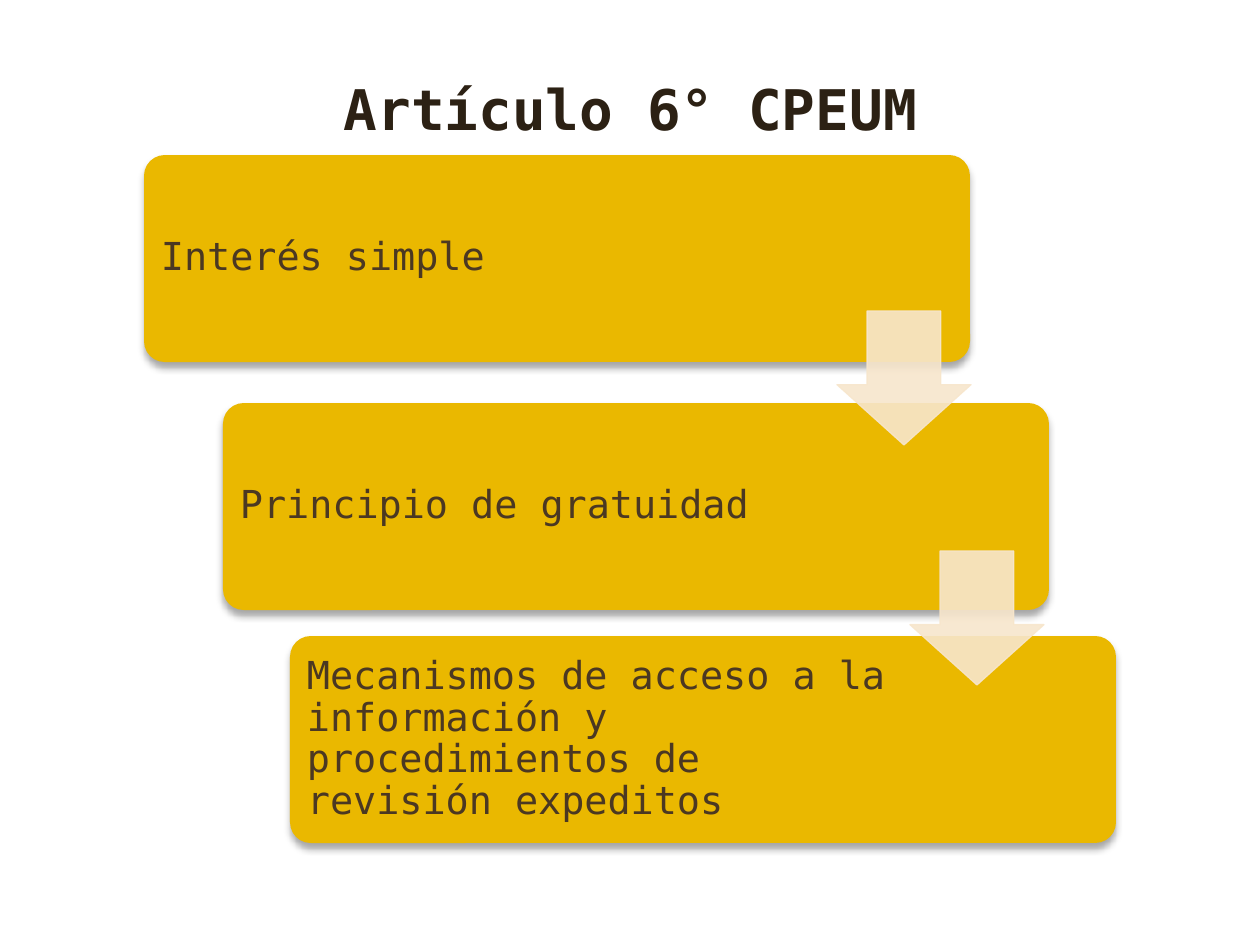
"""Build the slide on Article 6 as three descending steps joined by arrows."""
from dataclasses import dataclass

from lxml import etree
from pptx import Presentation
from pptx.dml.color import RGBColor
from pptx.enum.shapes import MSO_SHAPE
from pptx.enum.text import MSO_ANCHOR, PP_ALIGN
from pptx.oxml.ns import qn
from pptx.util import Emu, Pt

ROUNDED = MSO_SHAPE.ROUNDED_RECTANGLE
DOWN_ARROW = MSO_SHAPE.DOWN_ARROW
TOP, MIDDLE = MSO_ANCHOR.TOP, MSO_ANCHOR.MIDDLE
LEFT, CENTER = PP_ALIGN.LEFT, PP_ALIGN.CENTER

PX_PER_INCH = 126
FONT = "DejaVu Sans Mono"
COLORS = {
    "title": "2C2114",
    "text": "4B3822",
    "step": "EAB800",
    "arrow": "F7E6CC",
    "shadow": "000000",
}
STEP_WIDTH, STEP_HEIGHT = 826, 207
LABEL_WIDTH, LABEL_INSET = 607, 6
ARROW_SIZE = 134


@dataclass(frozen=True)
class Step:
    left: int
    top: int
    text: str


@dataclass(frozen=True)
class Arrow:
    left: int
    top: int


STEPS = (
    Step(144, 155, "Interés simple"),
    Step(223, 403, "Principio de gratuidad"),
    Step(290, 636, "Mecanismos de acceso a la información y "
                   "procedimientos de revisión expeditos"),
)
ARROWS = (Arrow(837, 311), Arrow(910, 551))


def px(length: int) -> Emu:
    return Emu(round(length * 914400 / PX_PER_INCH))


def color(name: str) -> RGBColor:
    return RGBColor.from_string(COLORS[name])


def write_text(shape, text: str, *, size: int, color_name: str, bold: bool = False,
               align=LEFT, anchor=MIDDLE, margins: tuple = (11, 11),
               line_spacing: float = 1.0) -> None:
    frame = shape.text_frame
    frame.word_wrap = True
    frame.vertical_anchor = anchor
    side, vertical = margins
    frame.margin_left = frame.margin_right = px(side)
    frame.margin_top = frame.margin_bottom = px(vertical)
    paragraph = frame.paragraphs[0]
    paragraph.alignment = align
    paragraph.line_spacing = line_spacing
    run = paragraph.add_run()
    run.text = text
    run.font.name = FONT
    run.font.size = Pt(size)
    run.font.bold = bold
    run.font.color.rgb = color(color_name)


def add_filled_shape(slide, kind, box: tuple, color_name: str, adjustments: tuple):
    shape = slide.shapes.add_shape(kind, *map(px, box))
    for index, value in enumerate(adjustments):
        shape.adjustments[index] = value
    shape.fill.solid()
    shape.fill.fore_color.rgb = color(color_name)
    shape.line.fill.background()
    shape.shadow.inherit = False
    return shape


def set_alpha(color_element, percent: int) -> None:
    etree.SubElement(color_element, qn("a:alpha"), val=str(percent * 1000))


def add_shadow(shape) -> None:
    effects = shape.element.spPr.find(qn("a:effectLst"))
    shadow = etree.SubElement(
        effects, qn("a:outerShdw"), blurRad=str(Pt(4)), dist=str(Pt(3)),
        dir="5400000", rotWithShape="0")
    set_alpha(etree.SubElement(shadow, qn("a:srgbClr"), val=COLORS["shadow"]), 35)


def draw_step(slide, step: Step) -> None:
    card = add_filled_shape(
        slide, ROUNDED, (step.left, step.top, STEP_WIDTH, STEP_HEIGHT), "step", (0.1,))
    add_shadow(card)
    label = slide.shapes.add_textbox(
        px(step.left + LABEL_INSET), px(step.top + LABEL_INSET),
        px(LABEL_WIDTH), px(STEP_HEIGHT - 2 * LABEL_INSET))
    write_text(label, step.text, size=22, color_name="text", line_spacing=0.9)


def draw_arrow(slide, arrow: Arrow) -> None:
    shape = add_filled_shape(
        slide, DOWN_ARROW, (arrow.left, arrow.top, ARROW_SIZE, ARROW_SIZE),
        "arrow", (0.45, 0.55))
    shape.adjustments[0], shape.adjustments[1] = 0.55, 0.45
    shape.line.color.rgb = color("arrow")
    shape.line.width = Pt(0.75)
    for color_element in shape.element.spPr.iter(qn("a:srgbClr")):
        set_alpha(color_element, 90)


def draw_title(slide, text: str) -> None:
    title = slide.shapes.title
    title.left, title.top, title.width, title.height = map(px, (95, 66, 1071, 110))
    write_text(title, text, size=32, color_name="title", bold=True,
               align=CENTER, anchor=TOP, margins=(11, 9))


def main() -> None:
    presentation = Presentation()
    presentation.slide_width, presentation.slide_height = px(1260), px(945)
    slide = presentation.slides.add_slide(presentation.slide_layouts[0])
    subtitle = slide.placeholders[1].element
    subtitle.getparent().remove(subtitle)
    draw_title(slide, "Artículo 6° CPEUM")
    for step in STEPS:
        draw_step(slide, step)
    for arrow in ARROWS:
        draw_arrow(slide, arrow)
    presentation.save("out.pptx")


if __name__ == "__main__":
    main()
